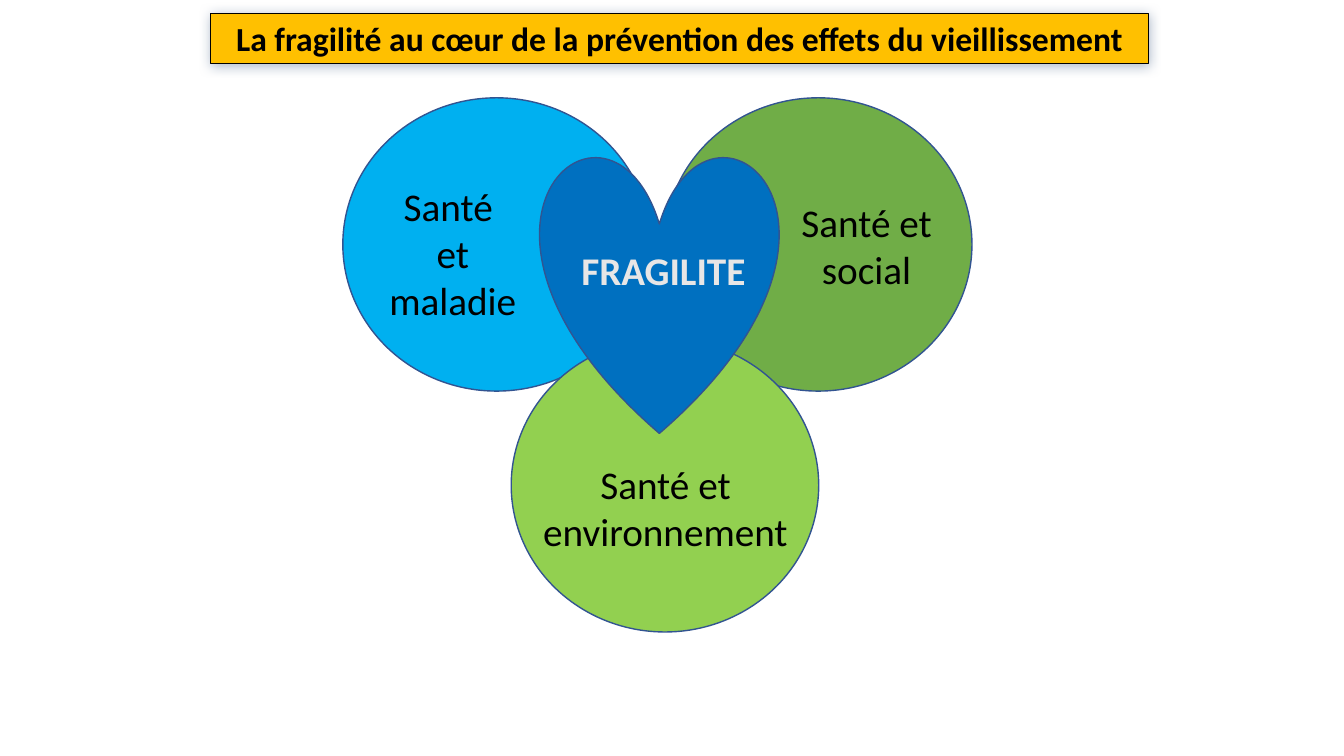
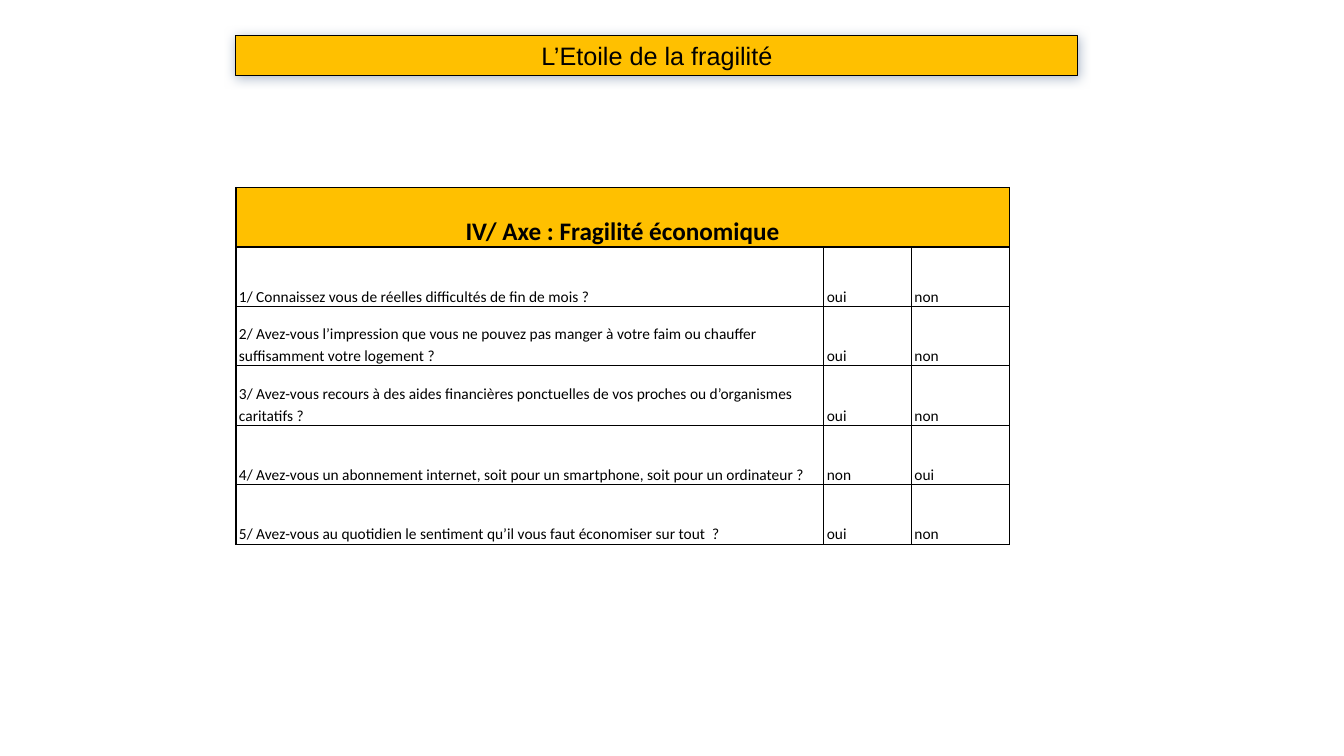
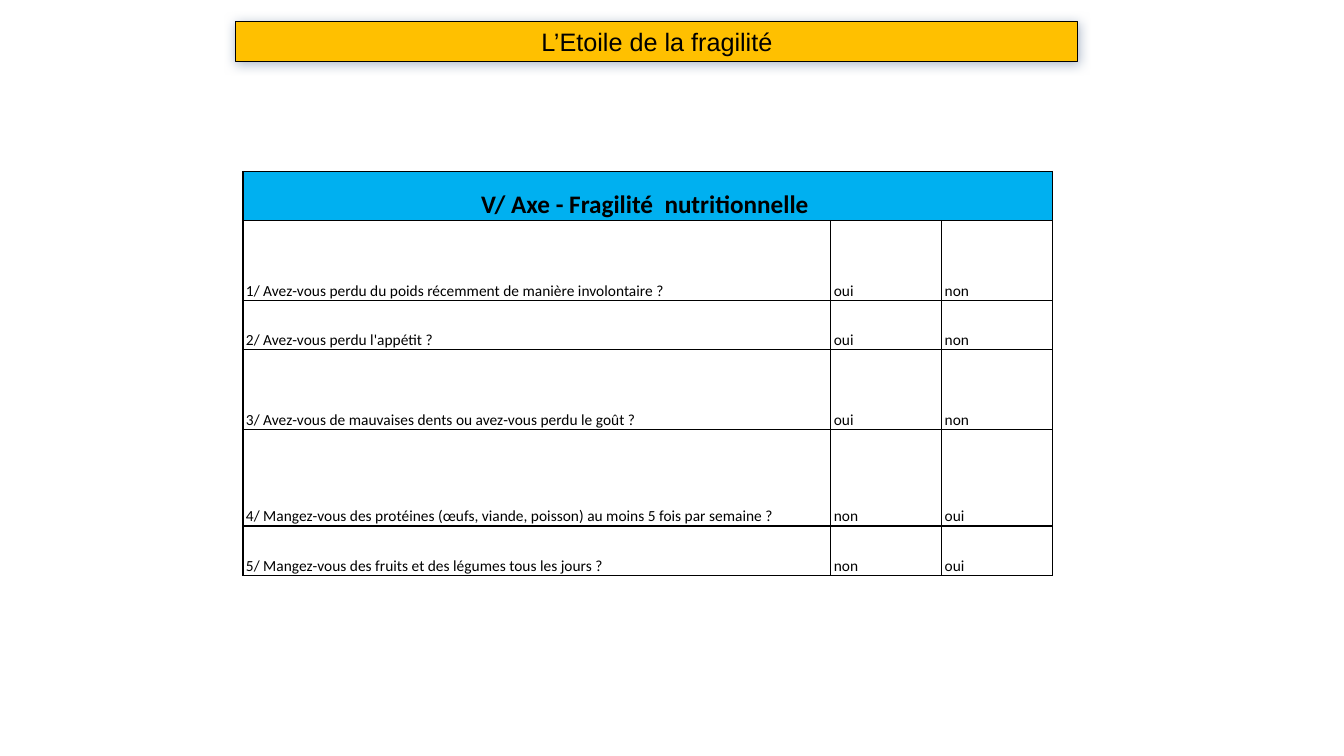
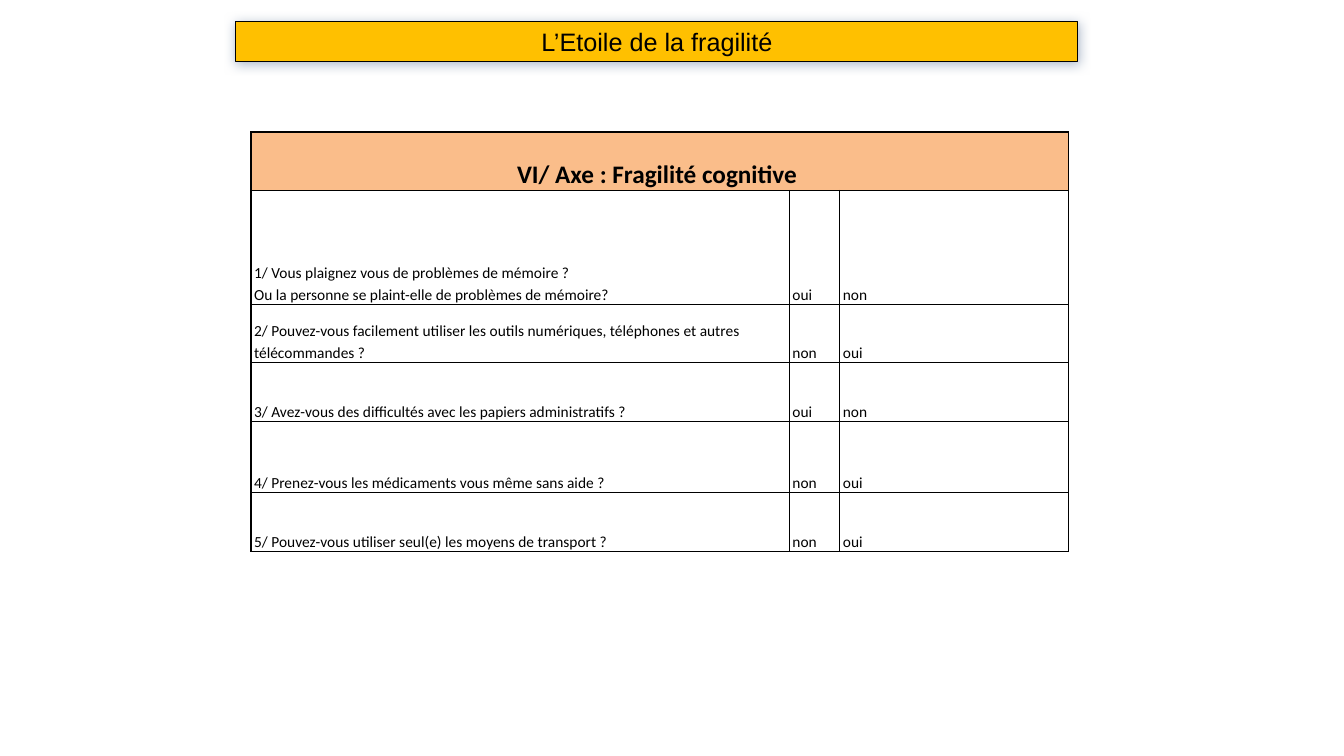
from dataclasses import dataclass
from pptx import Presentation
from pptx.dml.color import RGBColor
from pptx.enum.shapes import MSO_SHAPE
from pptx.enum.text import MSO_ANCHOR, MSO_AUTO_SIZE, PP_ALIGN
from pptx.oxml import parse_xml
from pptx.oxml.ns import nsdecls
from pptx.util import Inches, Pt


@dataclass(frozen=True)
class Theme:
    black: str = "000000"
    pale: str = "E7E6E6"
    gold: str = "FFC000"
    sky: str = "00B0F0"
    green: str = "70AD47"
    lime: str = "92D050"
    blue: str = "0070C0"
    peach: str = "FABD8A"
    edge: str = "325491"
    shade: str = "ADB9CA"
    body: str = "Calibri"
    plain: str = "Arial"
    label: int = 28
    lead: int = 24
    head: int = 18
    cell: int = 11


THEME = Theme()
STAR = "L’Etoile de la fragilité"


def color(code):
    return RGBColor.from_string(code)


def style(para, size, name=THEME.body, tint=THEME.black, bold=False):
    font = para.font
    font.size, font.name, font.bold = Pt(size), name, bold
    font.color.rgb = color(tint)


def paint(shape, fill, line, width):
    shape.fill.solid()
    shape.fill.fore_color.rgb = color(fill)
    shape.line.color.rgb = color(line)
    shape.line.width = Pt(width)


def place(shape, left, top, width, height):
    shape.left, shape.top = Inches(left), Inches(top)
    shape.width, shape.height = Inches(width), Inches(height)


def banner(deck, text, box, size, name, bold=False):
    slide = deck.slides.add_slide(deck.slide_layouts[5])
    title = slide.shapes.title
    place(title, *box)
    paint(title, THEME.gold, THEME.black, 0.75)
    title._element.spPr.append(parse_xml(
        f'<a:effectLst {nsdecls("a")}><a:outerShdw blurRad="{Pt(8.5)}" '
        f'dist="{Pt(1)}" dir="5400000" algn="ctr" rotWithShape="0">'
        f'<a:srgbClr val="{THEME.shade}"/></a:outerShdw></a:effectLst>'))
    frame = title.text_frame
    frame.text = text
    frame.word_wrap = True
    frame.auto_size = MSO_AUTO_SIZE.NONE
    frame.vertical_anchor = MSO_ANCHOR.MIDDLE
    para = frame.paragraphs[0]
    para.alignment = PP_ALIGN.CENTER
    style(para, size, name, bold=bold)
    return slide


def label(slide, lines, left, top, width, height, tint=THEME.black, bold=False):
    box = slide.shapes.add_textbox(
        Inches(left), Inches(top), Inches(width), Inches(height))
    frame = box.text_frame
    frame.word_wrap = True
    frame.text = lines
    for para in frame.paragraphs:
        para.alignment = PP_ALIGN.CENTER
        style(para, THEME.label, tint=tint, bold=bold)


def petals(slide, left, top):
    wide, high = 3.05, 2.91
    parts = [
        (MSO_SHAPE.OVAL, THEME.sky, 0, 0, wide, high),
        (MSO_SHAPE.OVAL, THEME.green, 3.19, 0, wide, high),
        (MSO_SHAPE.OVAL, THEME.lime, 1.67, 2.39, wide, high),
        (MSO_SHAPE.HEART, THEME.blue, 1.96, 0.56, 2.36, 2.77),
    ]
    for kind, fill, dx, dy, width, height in parts:
        shape = slide.shapes.add_shape(
            kind, Inches(left + dx), Inches(top + dy),
            Inches(width), Inches(height))
        shape.shadow.inherit = False
        paint(shape, fill, THEME.edge, 1)
    for text, dx, dy, width, height in [
        ("Santé \net maladie", 0.29, 0.79, 1.6, 1.51),
        ("Santé et social", 4.43, 0.95, 1.53, 1.04),
        ("Santé et environnement", 1.81, 3.55, 2.78, 1.04),
    ]:
        label(slide, text, left + dx, top + dy, width, height)
    label(slide, "FRAGILITE", left + 2.1, top + 1.42, 2.16, 0.57,
          THEME.pale, True)


def border(cell):
    props = cell._tc.get_or_add_tcPr()
    for side in ("lnL", "lnR", "lnT", "lnB"):
        props.append(parse_xml(
            f'<a:{side} {nsdecls("a")} w="{Pt(1)}"><a:solidFill>'
            f'<a:srgbClr val="{THEME.black}"/></a:solidFill></a:{side}>'))


def fill_cell(cell, text, size, bold=False):
    cell.text = text
    cell.vertical_anchor = MSO_ANCHOR.BOTTOM
    cell.margin_left = cell.margin_right = Inches(0.03)
    cell.margin_top, cell.margin_bottom = Inches(0.01), 0
    para = cell.text_frame.paragraphs[0]
    para.alignment = PP_ALIGN.CENTER if bold else PP_ALIGN.LEFT
    para.line_spacing = 1.15
    para.space_after = Pt(10)
    style(para, size, bold=bold)


def survey(slide, left, top, cols, rows, head, tint, items):
    table = slide.shapes.add_table(
        len(rows), len(cols), Inches(left), Inches(top),
        Inches(sum(cols)), Inches(sum(rows))).table
    table.first_row = table.horz_banding = False
    for col, width in zip(table.columns, cols):
        col.width = Inches(width)
    for row, height in zip(table.rows, rows):
        row.height = Inches(height)
    for cell in table.iter_cells():
        border(cell)
        cell.fill.background()
    first = table.cell(0, 0)
    first.merge(table.cell(0, len(cols) - 1))
    first.fill.solid()
    first.fill.fore_color.rgb = color(tint)
    fill_cell(first, head, THEME.head, True)
    for num, (ask, risk) in enumerate(items, 1):
        safe = "non" if risk == "oui" else "oui"
        for col, text in enumerate((f"{num}/ {ask}", risk, safe)):
            fill_cell(table.cell(num, col), text, THEME.cell)


SURVEYS = [
    (0.35, 2.34, 1.86, [5.83, 0.87, 0.97], [0.59] * 6,
     "IV/ Axe : Fragilité économique", THEME.gold, [
         ("Connaissez vous de réelles difficultés de fin de mois ?", "oui"),
         ("Avez-vous l’impression que vous ne pouvez pas manger à votre faim "
          "ou chauffer suffisamment votre logement ?", "oui"),
         ("Avez-vous recours à des aides financières ponctuelles de vos "
          "proches ou d’organismes caritatifs ?", "oui"),
         ("Avez-vous un abonnement internet, soit pour un smartphone, soit "
          "pour un ordinateur ?", "non"),
         ("Avez-vous au quotidien le sentiment qu’il vous faut économiser "
          "sur tout  ?", "oui")]),
    (0.21, 2.41, 1.7, [5.83, 1.1, 1.1], [0.49, 0.79, 0.49, 0.79, 0.96, 0.49],
     "V/ Axe - Fragilité  nutritionnelle ", THEME.sky, [
         ("Avez-vous perdu du poids récemment de manière involontaire ?",
          "oui"),
         ("Avez-vous perdu l'appétit ?", "oui"),
         ("Avez-vous de mauvaises dents ou avez-vous perdu le goût ?", "oui"),
         ("Mangez-vous des protéines (œufs, viande, poisson) au moins 5 fois "
          "par semaine ?", "non"),
         ("Mangez-vous des fruits et des légumes tous les jours ?", "non")]),
    (0.21, 2.49, 1.31, [5.34, 0.5, 2.27], [0.58, 1.13, 0.58, 0.58, 0.71, 0.58],
     "VI/ Axe : Fragilité cognitive ", THEME.peach, [
         ("Vous plaignez vous de problèmes de mémoire ?\v"
          "Ou la personne se plaint-elle de problèmes de mémoire?", "oui"),
         ("Pouvez-vous facilement utiliser les outils numériques, téléphones "
          "et autres télécommandes ?", "non"),
         ("Avez-vous des difficultés avec les papiers administratifs ?",
          "oui"),
         ("Prenez-vous les médicaments vous même sans aide ?", "non"),
         ("Pouvez-vous utiliser seul(e) les moyens de transport ?", "non")]),
]


def main():
    deck = Presentation()
    deck.slide_width, deck.slide_height = Inches(13.33), Inches(7.5)
    slide = banner(
        deck, "La fragilité au cœur de la prévention des effets du vieillissement",
        (2.09, 0.13, 9.3, 0.5), THEME.lead, THEME.body, True)
    petals(slide, 3.4, 0.97)
    for top, *parts in SURVEYS:
        slide = banner(deck, STAR, (2.34, top, 8.35, 0.4),
                       THEME.head, THEME.plain)
        survey(slide, *parts)
    deck.save("out.pptx")


if __name__ == "__main__":
    main()
